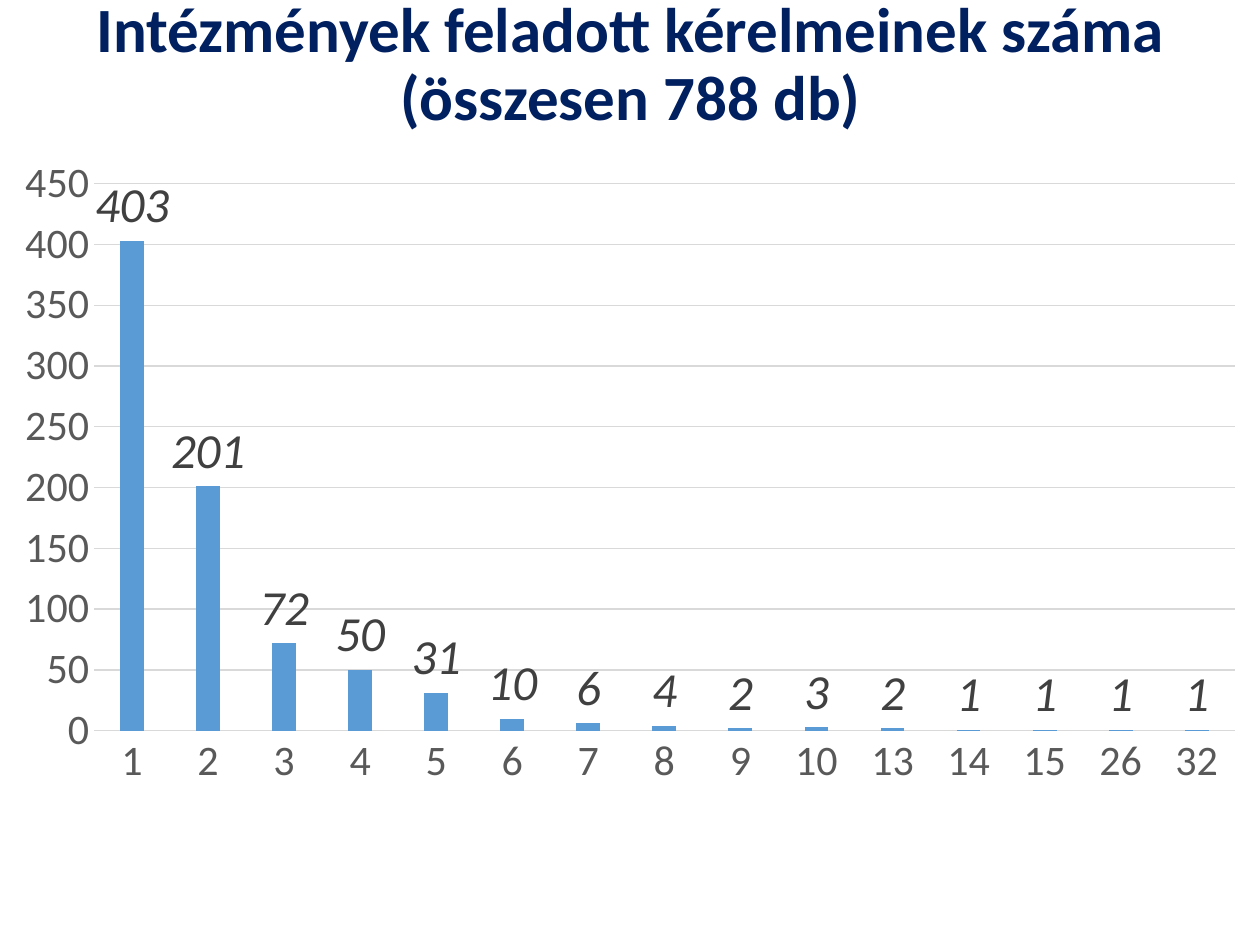
from typing import NamedTuple

from pptx import Presentation
from pptx.chart.data import CategoryChartData
from pptx.dml.color import RGBColor
from pptx.enum.chart import XL_CHART_TYPE as ChartType
from pptx.enum.chart import XL_LABEL_POSITION as LabelPosition
from pptx.enum.chart import XL_TICK_MARK as TickMark
from pptx.enum.text import MSO_ANCHOR as Anchor
from pptx.enum.text import PP_ALIGN as Align
from pptx.util import Pt

FONT = "Calibri"
NAVY = RGBColor(0x00, 0x20, 0x60)
BLUE = RGBColor(0x5B, 0x9B, 0xD5)
DARK_GRAY = RGBColor(0x40, 0x40, 0x40)
GRAY = RGBColor(0x59, 0x59, 0x59)
LIGHT_GRAY = RGBColor(0xD9, 0xD9, 0xD9)


class Box(NamedTuple):
    left: float
    top: float
    width: float
    height: float

    def points(self) -> list[Pt]:
        return [Pt(length) for length in self]


class Bar(NamedTuple):
    requests: str
    institutions: int


BARS = [
    Bar("1", 403), Bar("2", 201), Bar("3", 72), Bar("4", 50), Bar("5", 31),
    Bar("6", 10), Bar("7", 6), Bar("8", 4), Bar("9", 2), Bar("10", 3),
    Bar("13", 2), Bar("14", 1), Bar("15", 1), Bar("26", 1), Bar("32", 1),
]


def style_font(font, *, size: float, color: RGBColor, bold: bool = False,
               italic: bool = False) -> None:
    font.name = FONT
    font.size = Pt(size)
    font.bold = bold
    font.italic = italic
    font.color.rgb = color


def style_line(line, color: RGBColor, width: float = 0.75) -> None:
    line.color.rgb = color
    line.width = Pt(width)


def add_text(slide, box: Box, text: str, *, size: float, color: RGBColor,
             bold: bool = False, align=Align.CENTER, anchor=Anchor.MIDDLE,
             line_spacing: float = 0.9) -> None:
    frame = slide.shapes.add_textbox(*box.points()).text_frame
    frame.word_wrap = True
    frame.vertical_anchor = anchor
    paragraph = frame.paragraphs[0]
    paragraph.alignment = align
    paragraph.line_spacing = line_spacing
    run = paragraph.add_run()
    run.text = text
    style_font(run.font, size=size, color=color, bold=bold)


def style_axis(axis) -> None:
    axis.major_tick_mark = TickMark.NONE
    axis.minor_tick_mark = TickMark.NONE
    style_font(axis.tick_labels.font, size=24, color=GRAY)


def add_bar_chart(slide, box: Box, bars: list[Bar]) -> None:
    data = CategoryChartData()
    data.categories = [bar.requests for bar in bars]
    data.add_series("Series 1", [bar.institutions for bar in bars])
    chart = slide.shapes.add_chart(
        ChartType.COLUMN_CLUSTERED, *box.points(), data).chart
    chart.has_title = False
    chart.has_legend = False
    chart.font.name = FONT
    chart.font.size = Pt(10)

    category_axis, value_axis = chart.category_axis, chart.value_axis
    style_axis(category_axis)
    style_axis(value_axis)
    style_line(category_axis.format.line, LIGHT_GRAY)
    value_axis.format.line.fill.background()
    value_axis.minimum_scale = 0
    value_axis.maximum_scale = 450
    value_axis.major_unit = 50
    value_axis.has_major_gridlines = True
    style_line(value_axis.major_gridlines.format.line, LIGHT_GRAY)

    plot = chart.plots[0]
    plot.vary_by_categories = False
    plot.gap_width = 219
    plot.overlap = -27
    fill = plot.series[0].format.fill
    fill.solid()
    fill.fore_color.rgb = BLUE
    plot.has_data_labels = True
    labels = plot.data_labels
    labels.show_value = True
    labels.position = LabelPosition.OUTSIDE_END
    style_font(labels.font, size=28, color=DARK_GRAY, italic=True)


def main() -> None:
    presentation = Presentation()
    presentation.slide_width = Pt(720)
    presentation.slide_height = Pt(540)
    slide = presentation.slides.add_slide(presentation.slide_layouts[6])
    add_text(slide, Box(11.5, 9.4, 697.7, 56.9),
             "Intézmények feladott kérelmeinek száma (összesen 788 db)",
             size=36, color=NAVY, bold=True)
    add_bar_chart(slide, Box(0, 82.8, 720, 374.4), BARS)
    presentation.save("out.pptx")


if __name__ == "__main__":
    main()
